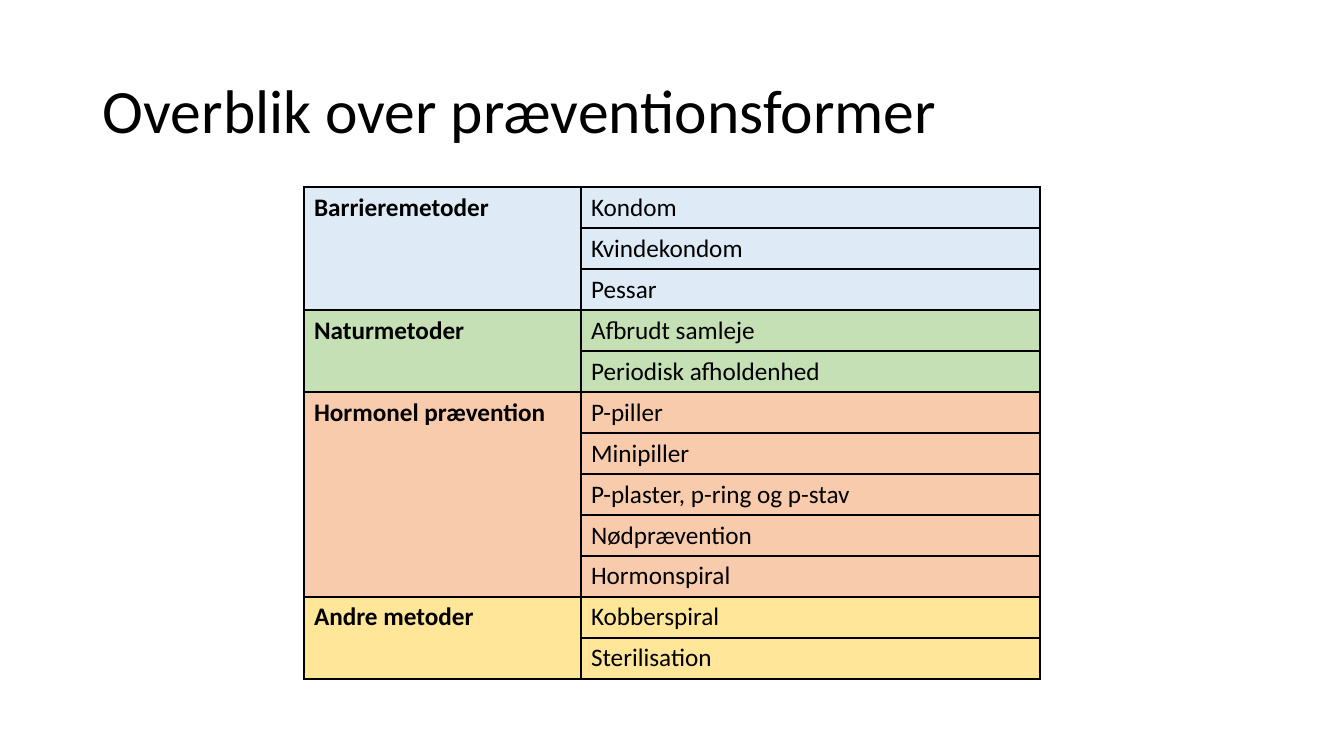
from pptx import Presentation
from pptx.dml.color import RGBColor
from pptx.enum.text import MSO_ANCHOR
from pptx.oxml import parse_xml
from pptx.oxml.ns import nsdecls
from pptx.util import Pt

TITLE = "Overblik over præventionsformer"
BLACK = RGBColor(0, 0, 0)
BLUE = RGBColor(0xDE, 0xEB, 0xF7)
GREEN = RGBColor(0xC5, 0xE0, 0xB4)
ORANGE = RGBColor(0xF8, 0xCB, 0xAD)
YELLOW = RGBColor(0xFF, 0xE6, 0x99)

GROUPS = [
    ("Barrieremetoder", BLUE, ["Kondom", "Kvindekondom", "Pessar"]),
    ("Naturmetoder", GREEN, ["Afbrudt samleje", "Periodisk afholdenhed"]),
    ("Hormonel prævention", ORANGE, [
        "P-piller", "Minipiller", "P-plaster, p-ring og p-stav",
        "Nødprævention", "Hormonspiral"]),
    ("Andre metoder", YELLOW, ["Kobberspiral", "Sterilisation"]),
]

SIZE = (1344, 756)
TITLE_BOX = (93, 41, 1159, 146)
TABLE_AT = (304, 187)
COLS = (277, 459)
ROW = 41
TITLE_FONT = {"name": "Calibri", "size": Pt(44), "bold": False}
NAME_FONT = {"name": "Calibri", "size": Pt(18), "bold": True}
ITEM_FONT = {**NAME_FONT, "bold": False}


def px(count):
    return round(count * 12192000 / SIZE[0])


def write(frame, text, style):
    run = frame.paragraphs[0].add_run()
    run.text = text
    for key, value in style.items():
        setattr(run.font, key, value)
    run.font.color.rgb = BLACK


def paint(cell, color):
    props = cell._tc.get_or_add_tcPr()
    for side in ("lnL", "lnR", "lnT", "lnB"):
        props.append(parse_xml(
            f'<a:{side} {nsdecls("a")} w="{Pt(1)}"><a:solidFill>'
            f'<a:srgbClr val="{BLACK}"/></a:solidFill></a:{side}>'))
    cell.fill.solid()
    cell.fill.fore_color.rgb = color


def add_title(slide):
    frame = slide.shapes.add_textbox(*map(px, TITLE_BOX)).text_frame
    frame.word_wrap = True
    frame.vertical_anchor = MSO_ANCHOR.MIDDLE
    frame.paragraphs[0].line_spacing = 0.9
    write(frame, TITLE, TITLE_FONT)


def add_methods(slide):
    count = sum(len(items) for name, color, items in GROUPS)
    box = (*TABLE_AT, sum(COLS), count * ROW)
    table = slide.shapes.add_table(count, len(COLS), *map(px, box)).table
    table.first_row = table.horz_banding = False
    for col, width in zip(table.columns, COLS):
        col.width = px(width)
    for row in table.rows:
        row.height = px(ROW)
    top = 0
    for name, color, items in GROUPS:
        for row, item in enumerate(items, top):
            for col in range(len(COLS)):
                paint(table.cell(row, col), color)
            write(table.cell(row, 1).text_frame, item, ITEM_FONT)
        head = table.cell(top, 0)
        write(head.text_frame, name, NAME_FONT)
        top += len(items)
        head.merge(table.cell(top - 1, 0))


def main():
    deck = Presentation()
    deck.slide_width, deck.slide_height = map(px, SIZE)
    slide = deck.slides.add_slide(deck.slide_layouts[6])
    add_title(slide)
    add_methods(slide)
    deck.save("out.pptx")


if __name__ == "__main__":
    main()
